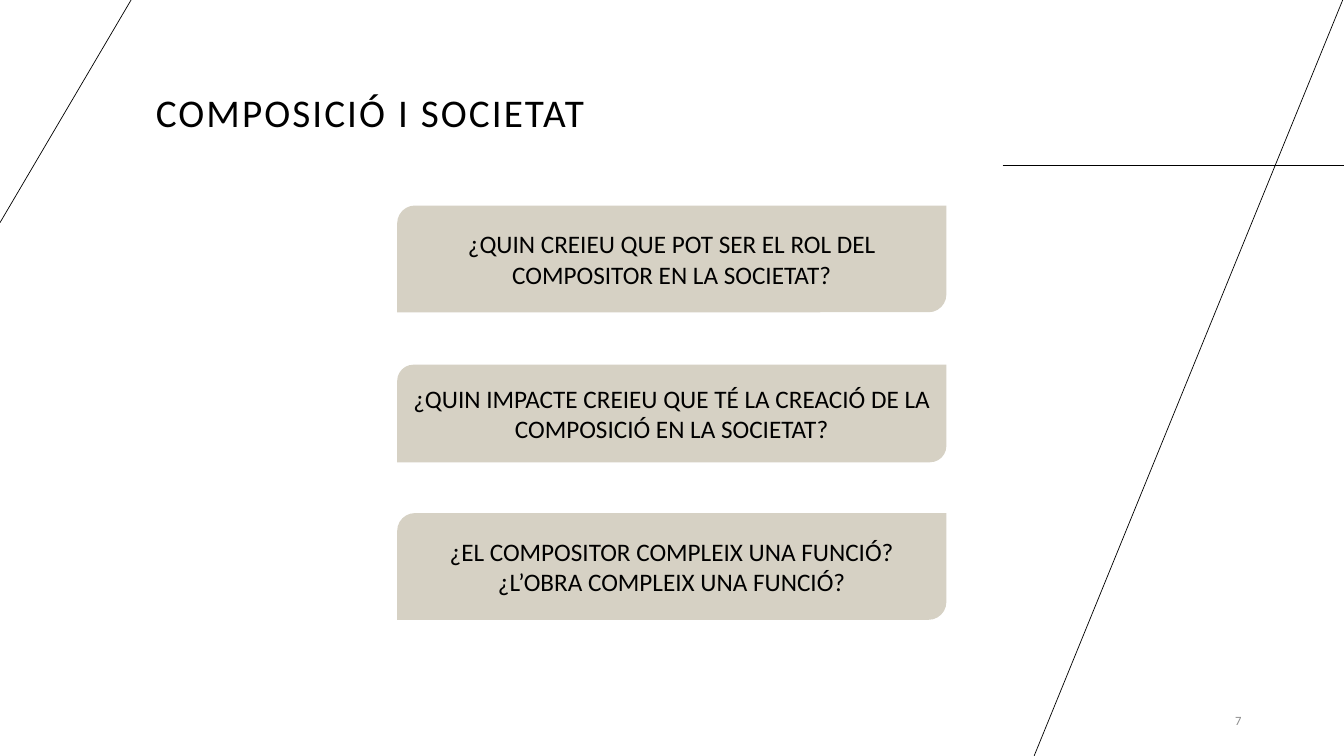
import pptx
import pptx.util
import pptx.dml.color
import pptx.enum.shapes
import pptx.enum.text
import pptx.oxml.ns
from lxml import etree

Cm, Pt = pptx.util.Cm, pptx.util.Pt
ALIGN = pptx.enum.text.PP_ALIGN
ANCHOR = pptx.enum.text.MSO_ANCHOR
COLORS = {"ink": "000000", "sand": "D6D1C4", "grey": "8C8C8C", "paper": "FFFFFF"}


def rgb(name):
    return pptx.dml.color.RGBColor.from_string(COLORS[name])


class Deck:
    """Holds the style and the current slide."""

    font = "Calibri"

    def __init__(self, prs):
        self.s = prs.slides.add_slide(prs.slide_layouts[6])
        fill = self.s.background.fill
        fill.solid()
        fill.fore_color.rgb = rgb("paper")

    def set_text(self, sp, text, size, color="ink", align=ALIGN.LEFT, anchor=ANCHOR.MIDDLE):
        tf = sp.text_frame
        tf.word_wrap = True
        tf.vertical_anchor = anchor
        p = tf.paragraphs[0]
        p.text = text
        p.alignment = align
        p.font.name = self.font
        p.font.size = Pt(size)
        p.font.color.rgb = rgb(color)
        return p

    def text(self, x, y, w, h, text, size, **style):
        sp = self.s.shapes.add_textbox(Cm(x), Cm(y), Cm(w), Cm(h))
        return self.set_text(sp, text, size, **style)

    def line(self, x1, y1, x2, y2):
        c = self.s.shapes.add_connector(
            pptx.enum.shapes.MSO_CONNECTOR.STRAIGHT, Cm(x1), Cm(y1), Cm(x2), Cm(y2))
        c.line.color.rgb = rgb("ink")
        c.line.width = Pt(0.5)
        etree.SubElement(c._element.spPr, pptx.oxml.ns.qn("a:effectLst"))

    def card(self, x, y, w, h, text):
        sp = self.s.shapes.add_shape(
            pptx.enum.shapes.MSO_SHAPE.ROUND_2_DIAG_RECTANGLE, Cm(x), Cm(y), Cm(w), Cm(h))
        sp.shadow.inherit = False
        sp.fill.solid()
        sp.fill.fore_color.rgb = rgb("sand")
        sp.line.fill.background()
        self.set_text(sp, text, 18, align=ALIGN.CENTER)


def main():
    prs = pptx.Presentation()
    prs.slide_width, prs.slide_height = Cm(33.87), Cm(19.05)
    deck = Deck(prs)

    # Decorative lines
    deck.line(25.27, 4.17, 33.87, 4.17)
    deck.line(33.87, -0.08, 26.06, 19.05)
    deck.line(0, 5.61, 3.35, -0.08)

    # Slide number
    deck.text(28.8, 17.65, 2.74, 1.02, "7", 9, color="grey", align=ALIGN.RIGHT)

    # Title, with letter spacing in hundredths of a point
    p = deck.text(3.68, 2.21, 20.24, 1.35, "COMPOSICIÓ I SOCIETAT", 28, anchor=ANCHOR.BOTTOM)
    p.line_spacing = 0.9
    p.runs[0].font._element.set("spc", "150")

    # Question cards
    questions = [
        (5.18, 2.69, "¿QUIN CREIEU QUE POT SER EL ROL DEL COMPOSITOR EN LA SOCIETAT?"),
        (9.19, 2.46, "¿QUIN IMPACTE CREIEU QUE TÉ LA CREACIÓ DE LA COMPOSICIÓ EN LA SOCIETAT?"),
        (12.93, 2.69, "¿EL COMPOSITOR COMPLEIX UNA FUNCIÓ?\v¿L’OBRA COMPLEIX UNA FUNCIÓ?"),
    ]
    for top, height, question in questions:
        deck.card(10.01, top, 13.84, height, question)

    prs.save("out.pptx")


if __name__ == "__main__":
    main()
